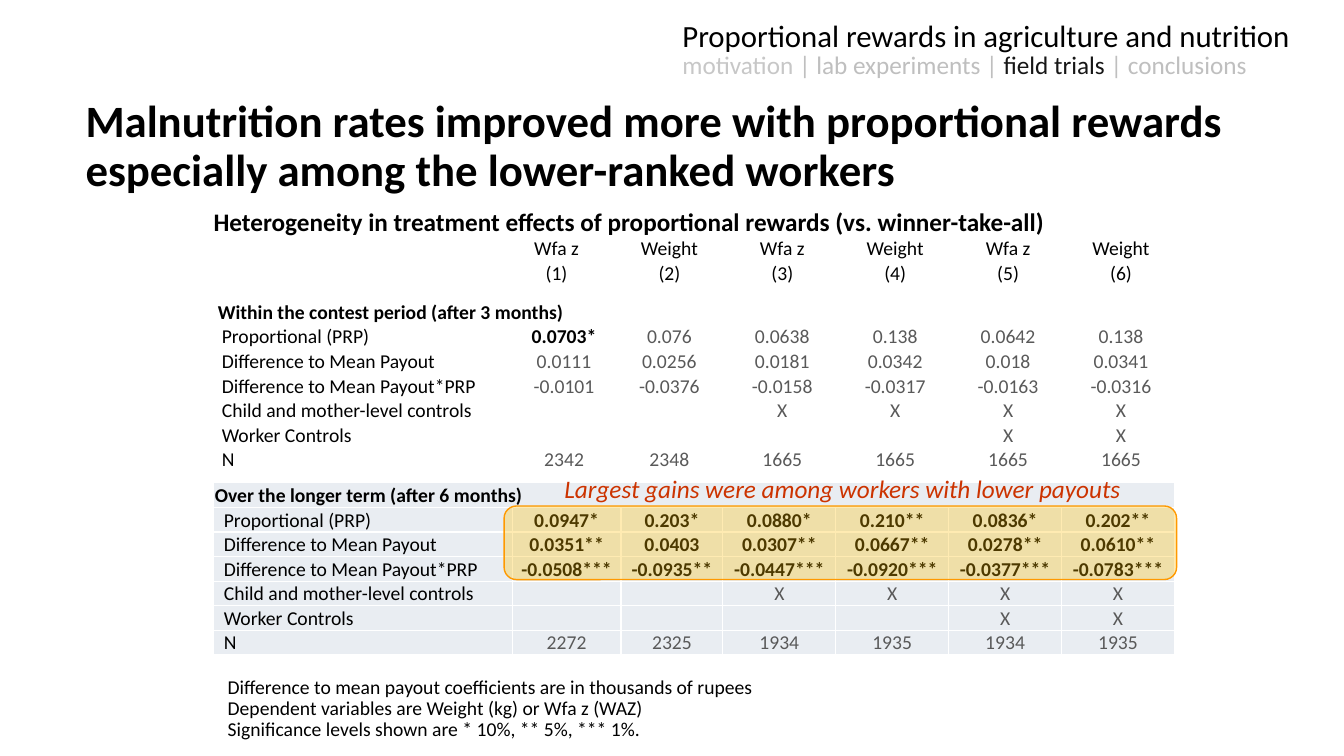
"""Slide on how proportional rewards changed malnutrition rates, with two regression tables."""
import pptx
import pptx.dml.color
import pptx.enum.shapes
import pptx.enum.text
import pptx.oxml
import pptx.oxml.ns
import pptx.util

Inches, Pt = pptx.util.Inches, pptx.util.Pt
ALIGN = pptx.enum.text.PP_ALIGN
ANCHOR = pptx.enum.text.MSO_ANCHOR
COLORS = {
    "black": "000000", "grey": "595959", "white": "FFFFFF", "band": "E9EDF2",
    "gold": "FFC000", "orange": "FF9900", "red": "CC3300",
    "faded": "C7C7C7", "separator": "BFBFBF", "current": "161616",
}
NAMESPACE = pptx.oxml.ns.nsdecls("a")


def add_text(box, paragraphs, spacing=1.0, anchor=ANCHOR.TOP):
    """Add a text box; each paragraph is a list of (text, size, colour, bold, italic)."""
    frame = slide.shapes.add_textbox(*[Inches(length) for length in box]).text_frame
    frame.word_wrap = True
    frame.vertical_anchor = anchor
    for index, pieces in enumerate(paragraphs):
        paragraph = frame.add_paragraph() if index else frame.paragraphs[0]
        paragraph.line_spacing = spacing
        for text, size, color, bold, italic in pieces:
            run = paragraph.add_run()
            run.text = text
            run.font.name, run.font.size = "Calibri", Pt(size)
            run.font.bold, run.font.italic = bold, italic
            run.font.color.rgb = pptx.dml.color.RGBColor.from_string(COLORS[color])


def fill_cell(cell, text="", color="black", bold=False, align=ALIGN.LEFT, indent=0.01):
    """Write and format the text of one table cell."""
    cell.margin_left, cell.margin_right = Inches(indent), Inches(0.01)
    cell.margin_top, cell.margin_bottom = Inches(0.01), Inches(0)
    cell.vertical_anchor = ANCHOR.MIDDLE
    paragraph = cell.text_frame.paragraphs[0]
    paragraph.text = text
    paragraph.alignment = align
    for run in paragraph.runs:
        run.font.name, run.font.size, run.font.bold = "Calibri", Pt(14), bold
        run.font.color.rgb = pptx.dml.color.RGBColor.from_string(COLORS[color])
    if not text:
        paragraph._p.append(pptx.oxml.parse_xml(f'<a:endParaRPr {NAMESPACE} sz="1400"/>'))


presentation = pptx.Presentation()
presentation.slide_width, presentation.slide_height = Inches(13.33), Inches(7.5)
slide = presentation.slides.add_slide(presentation.slide_layouts[6])

notes = [
    "Difference to mean payout coefficients are in thousands of rupees",
    "Dependent variables are Weight (kg) or Wfa z (WAZ)",
    "Significance levels shown are * 10%, ** 5%, *** 1%.",
]
add_text((2.16, 6.67, 7.94, 0.92), [[(note, 14, "black", False, False)] for note in notes], 0.9)

measures = [
    "Proportional (PRP)", "Difference to Mean Payout", "Difference to Mean Payout*PRP",
    "Child and mother-level controls", "Worker Controls", "N",
]
controls = [["", "", "X", "X", "X", "X"], ["", "", "", "", "X", "X"]]
contest_values = [
    ["0.0703*", "0.076", "0.0638", "0.138", "0.0642", "0.138"],
    ["0.0111", "0.0256", "0.0181", "0.0342", "0.018", "0.0341"],
    ["-0.0101", "-0.0376", "-0.0158", "-0.0317", "-0.0163", "-0.0316"],
    *controls,
    ["2342", "2348", "1665", "1665", "1665", "1665"],
]
longer_values = [
    ["0.0947*", "0.203*", "0.0880*", "0.210**", "0.0836*", "0.202**"],
    ["0.0351**", "0.0403", "0.0307**", "0.0667**", "0.0278**", "0.0610**"],
    ["-0.0508***", "-0.0935**", "-0.0447***", "-0.0920***", "-0.0377***", "-0.0783***"],
    *controls,
    ["2272", "2325", "1934", "1935", "1934", "1935"],
]
emphasized = {"0.0703*"}.union(*longer_values[:3])
column_heads = [["Wfa z", "Weight"] * 3, [f"({number})" for number in range(1, 7)]]

periods = [
    {"title": "Within the contest period (after 3 months)", "values": contest_values,
     "heads": column_heads, "left": 2.15, "top": 2.34, "indent": 0.05, "fill": None,
     "widths": [2.81, 0.15, 0.97] + [1.12] * 5, "heights": [0.23, 0.39] + [0.23] * 7},
    {"title": "Over the longer term (after 6 months)", "values": longer_values,
     "heads": [], "left": 2.12, "top": 4.79, "indent": 0.1, "fill": "band",
     "widths": [2.96, 1.08, 1.01] + [1.12] * 4, "heights": [0.23] * 7},
]
for period in periods:
    widths, heights, heads = period["widths"], period["heights"], period["heads"]
    table = slide.shapes.add_table(
        len(heights), len(widths), Inches(period["left"]), Inches(period["top"]),
        Inches(sum(widths)), Inches(sum(heights))).table
    table.first_row = table.horz_banding = False
    for column, width in zip(table.columns, widths):
        column.width = Inches(width)
    for row, height in zip(table.rows, heights):
        row.height = Inches(height)

    contents = {}
    first_value = len(widths) - 6
    for row, labels in enumerate(heads):
        for offset, label in enumerate(labels):
            column = offset + first_value if offset else 1
            contents[row, column] = {"text": label, "align": ALIGN.CENTER}
        table.cell(row, 1).merge(table.cell(row, 2))
    title_row = len(heads)
    contents[title_row, 0] = {"text": period["title"], "bold": True}
    table.cell(title_row, 0).merge(table.cell(title_row, len(widths) - 1))
    for row, (measure, values) in enumerate(zip(measures, period["values"]), title_row + 1):
        contents[row, 0] = {"text": measure, "indent": period["indent"]}
        if first_value > 1:
            table.cell(row, 0).merge(table.cell(row, 1))
        for column, value in enumerate(values, first_value):
            strong = value in emphasized
            contents[row, column] = {"text": value, "bold": strong, "align": ALIGN.CENTER,
                                     "color": "black" if strong else "grey"}

    for row in range(len(heights)):
        for column in range(len(widths)):
            cell = table.cell(row, column)
            fill_cell(cell, **contents.get((row, column), {}))
            if heads and row == 1:
                cell.vertical_anchor = ANCHOR.TOP
            for side in ("lnL", "lnR", "lnT", "lnB"):
                cell._tc.get_or_add_tcPr().append(pptx.oxml.parse_xml(
                    f'<a:{side} {NAMESPACE} w="12700"><a:solidFill>'
                    f'<a:srgbClr val="{COLORS["white"]}"/></a:solidFill></a:{side}>'))
            if period["fill"]:
                cell.fill.solid()
                cell.fill.fore_color.rgb = pptx.dml.color.RGBColor.from_string(
                    COLORS[period["fill"]])
            else:
                cell.fill.background()

highlight = slide.shapes.add_shape(
    pptx.enum.shapes.MSO_SHAPE.ROUNDED_RECTANGLE,
    Inches(5), Inches(5.02), Inches(6.67), Inches(0.73))
highlight.shadow.inherit = False
highlight.fill.solid()
highlight.fill.fore_color.rgb = pptx.dml.color.RGBColor.from_string(COLORS["gold"])
highlight.line.color.rgb = pptx.dml.color.RGBColor.from_string(COLORS["orange"])
highlight.line.width = Pt(1)
gold = highlight._element.spPr.find(pptx.oxml.ns.qn("a:solidFill"))[0]
gold.append(pptx.oxml.parse_xml(f'<a:alpha {NAMESPACE} val="30000"/>'))

add_text((5.5, 4.65, 6.27, 0.4),
         [[("Largest gains were among workers with lower payouts", 18, "red", False, True)]])
add_text((0.75, 1.13, 12.17, 0.67),
         [[("Malnutrition rates improved more with proportional rewards especially among "
            "the lower-ranked workers", 32, "black", True, False)]], 0.9, ANCHOR.MIDDLE)
add_text((2.02, 2, 8.64, 0.4),
         [[("Heterogeneity in treatment effects of proportional rewards "
            "(vs. winner-take-all)", 18, "black", True, False)]])
add_text((6.67, 0.17, 6.58, 0.68), [
    [("Proportional rewards in agriculture and nutrition", 22, "black", False, False)],
    [("motivation", 18, "faded", False, False),
     (" | lab experiments | ", 18, "separator", False, False),
     ("field trials", 18, "current", False, False),
     (" | conclusions", 18, "separator", False, False)],
], 0.85)

presentation.save("out.pptx")
